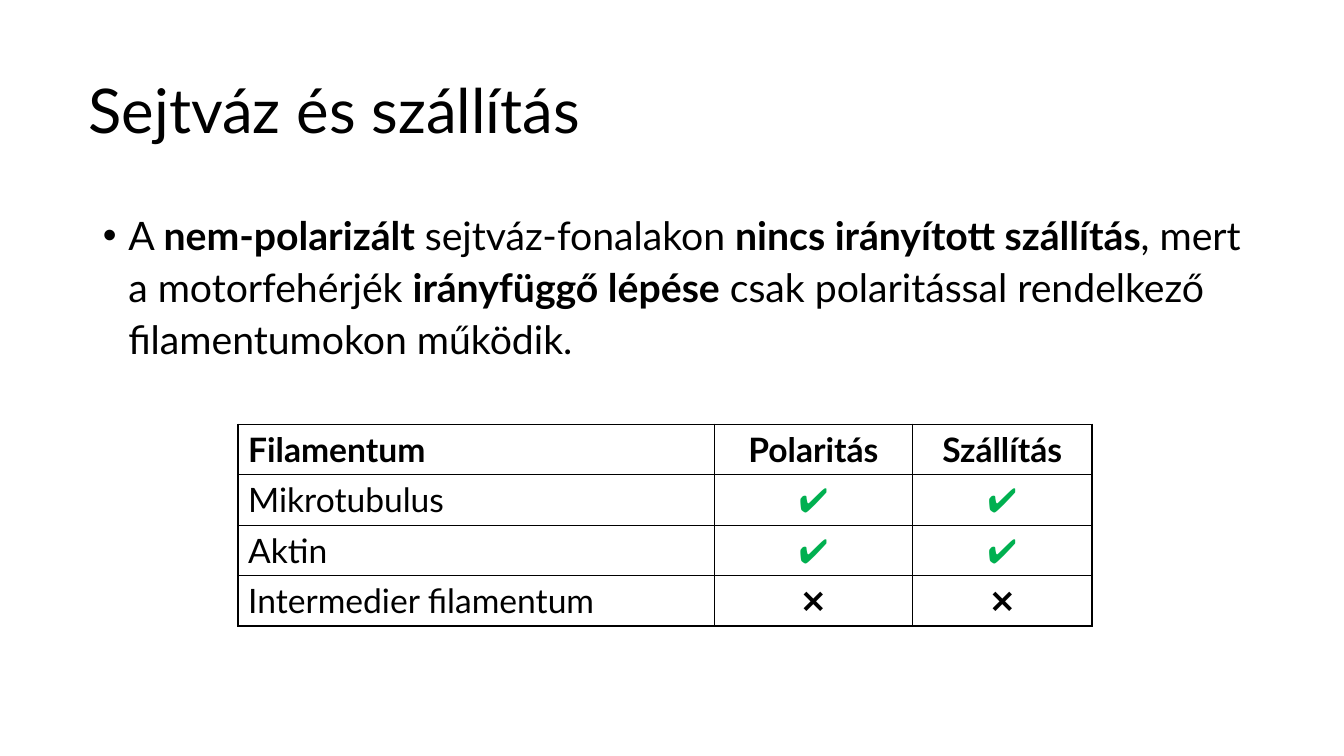
from dataclasses import dataclass

from lxml import etree
from pptx import Presentation
from pptx.dml.color import RGBColor
from pptx.enum.text import MSO_ANCHOR, MSO_AUTO_SIZE, PP_ALIGN
from pptx.oxml.ns import qn
from pptx.util import Cm, Pt

LEFT, CENTER = PP_ALIGN.LEFT, PP_ALIGN.CENTER
MIDDLE, TOP = MSO_ANCHOR.MIDDLE, MSO_ANCHOR.TOP
NO_FIT = MSO_AUTO_SIZE.NONE


@dataclass(frozen=True)
class Theme:
    font: str = "Lato"
    ink: str = "000000"
    green: str = "00B050"
    title: int = 44
    body: int = 28
    cell: int = 24
    line: int = 1


theme = Theme()


def add_run(para, text, size, bold=False, color=theme.ink):
    run = para.add_run()
    run.text = text
    style = {"name": theme.font, "size": Pt(size), "bold": bold}
    for key, value in style.items():
        setattr(run.font, key, value)
    run.font.color.rgb = RGBColor.from_string(color)


def add_edges(cell):
    """Draw a thin line on all four sides of a table cell."""
    props = cell._tc.get_or_add_tcPr()
    for spot, side in enumerate("LRTB"):
        edge = etree.Element(qn(f"a:ln{side}"), w=str(Pt(theme.line)))
        fill = etree.SubElement(edge, qn("a:solidFill"))
        etree.SubElement(fill, qn("a:srgbClr"), val=theme.ink)
        props.insert(spot, edge)


deck = Presentation()
deck.slide_width, deck.slide_height = Cm(33.87), Cm(19.05)
slide = deck.slides.add_slide(deck.slide_layouts[1])
title, body = slide.placeholders

# Placeholders
places = [
    (title, (1.98, 1.02, 29.21, 3.68), MIDDLE, {"line_spacing": 0.9}),
    (body, (2.34, 5.08, 29.21, 5.61), TOP,
     {"line_spacing": 1.1, "space_before": Pt(10)}),
]
for shape, box, anchor, format in places:
    for key, value in zip(("left", "top", "width", "height"), box):
        setattr(shape, key, Cm(value))
    frame = shape.text_frame
    frame.auto_size = NO_FIT
    frame.vertical_anchor = anchor
    for key, value in {"alignment": LEFT, **format}.items():
        setattr(frame.paragraphs[0], key, value)

add_run(title.text_frame.paragraphs[0], "Sejtváz és szállítás", theme.title)

point = body.text_frame.paragraphs[0]
props = point._p.get_or_add_pPr()
props.set("marL", str(Cm(0.64)))
props.set("indent", str(-Cm(0.64)))
parts = [
    ("A ", False),
    ("nem-polarizált", True),
    (" sejtváz-fonalakon ", False),
    ("nincs irányított szállítás", True),
    (", mert a motorfehérjék ", False),
    ("irányfüggő lépése", True),
    (" csak polaritással rendelkező filamentumokon működik.", False),
]
for text, bold in parts:
    add_run(point, text, theme.body, bold)

# Table
rows = [
    ("Filamentum", "Polaritás", "Szállítás"),
    ("Mikrotubulus", "✔", "✔"),
    ("Aktin", "✔", "✔"),
    ("Intermedier filamentum", "❌", "❌"),
]
widths = [12, 5, 4.52]
high = 1.27
table = slide.shapes.add_table(
    len(rows), len(widths), Cm(6), Cm(10.69),
    Cm(sum(widths)), Cm(high * len(rows))).table
table.first_row = table.horz_banding = False
for col, width in zip(table.columns, widths):
    col.width = Cm(width)

for r, row in enumerate(rows):
    table.rows[r].height = Cm(high)
    for c, text in enumerate(row):
        cell = table.cell(r, c)
        cell.fill.background()
        cell.vertical_anchor = MIDDLE
        add_edges(cell)
        para = cell.text_frame.paragraphs[0]
        para.alignment = CENTER if c else LEFT
        color = theme.green if text == "✔" else theme.ink
        add_run(para, text, theme.cell, r == 0, color)

deck.save("out.pptx")
